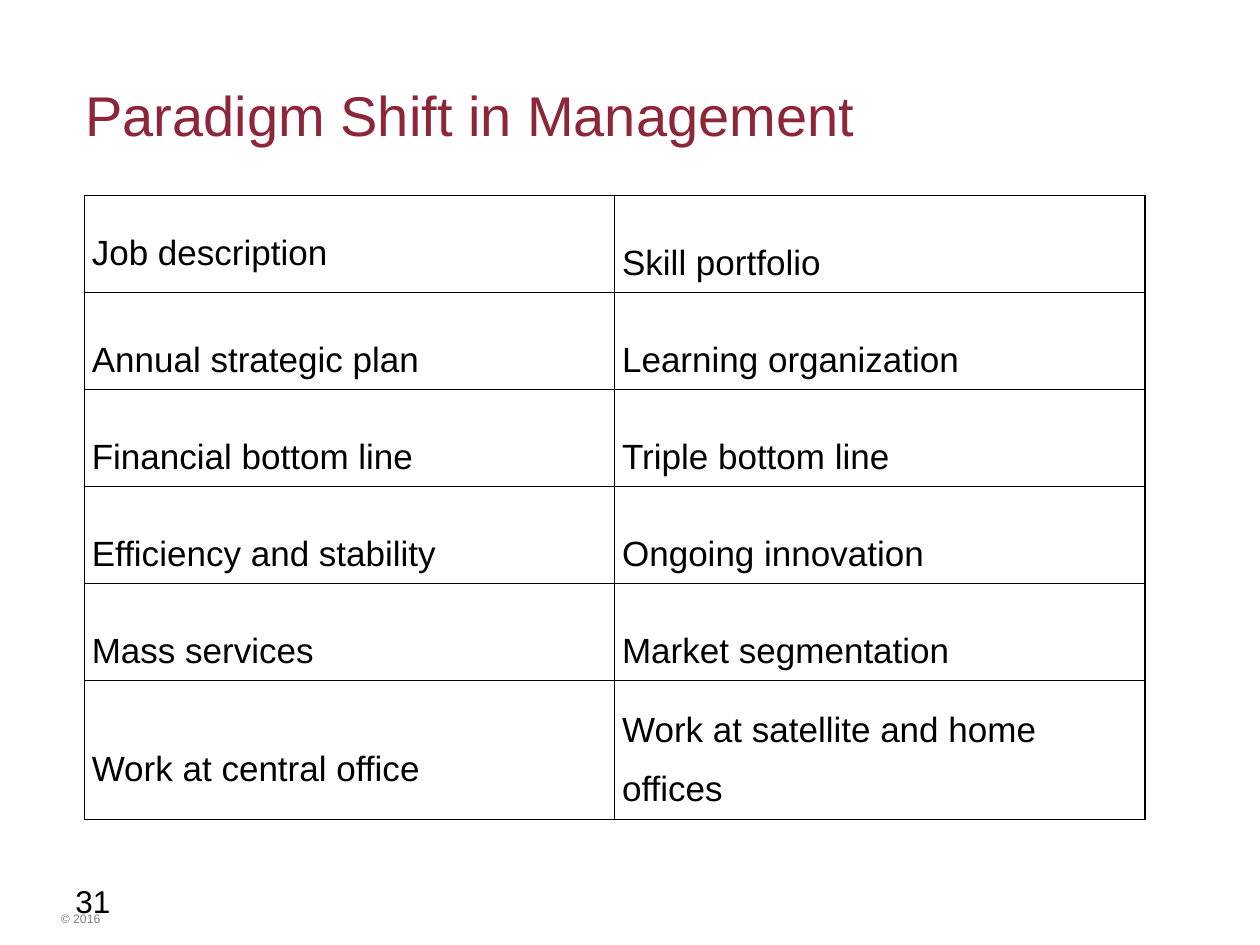
"""Build the slide on the paradigm shift in management."""
import pptx
import pptx.dml.color
import pptx.enum.text
import pptx.oxml
import pptx.oxml.ns
import pptx.util

Cm = pptx.util.Cm
Pt = pptx.util.Pt
RGBColor = pptx.dml.color.RGBColor
ALIGN = pptx.enum.text.PP_ALIGN
ANCHOR = pptx.enum.text.MSO_ANCHOR

TITLE = "Paradigm Shift in Management"
SHIFTS = [
    ("Job description", "Skill portfolio"),
    ("Annual strategic plan", "Learning organization"),
    ("Financial bottom line", "Triple bottom line"),
    ("Efficiency and stability", "Ongoing innovation"),
    ("Mass services", "Market segmentation"),
    ("Work at central office", "Work at satellite and home offices"),
]
TIGHT_TEXTS = {SHIFTS[0][0], SHIFTS[-1][1]}
PAGE_NUMBER = "31"
COPYRIGHT = "© 2016"

FONT = "Arial"
MAROON = RGBColor(0x8C, 0x26, 0x38)
BLACK = RGBColor(0, 0, 0)
GRAY = RGBColor(0x80, 0x80, 0x80)
WHITE = RGBColor(0xFF, 0xFF, 0xFF)

COLUMN_WIDTH = Cm(10.69)
ROW_HEIGHT = Cm(1.94)
LAST_ROW_HEIGHT = Cm(2.79)


def write(frame, text, size, color, align=ALIGN.LEFT):
    frame.text = text
    paragraph = frame.paragraphs[0]
    paragraph.alignment = align
    font = paragraph.runs[0].font
    font.name, font.size = FONT, Pt(size)
    font.color.rgb = color
    return paragraph


def place(box, left, top, width, height):
    box.left, box.top, box.width, box.height = map(Cm, (left, top, width, height))


def add_label(page, position, text, size, color, align=ALIGN.LEFT):
    box = page.shapes.add_textbox(*map(Cm, position))
    box.text_frame.word_wrap = True
    write(box.text_frame, text, size, color, align)


def add_borders(cell):
    properties = cell._tc.get_or_add_tcPr()
    for index, side in enumerate(("lnL", "lnR", "lnT", "lnB")):
        line = pptx.oxml.parse_xml(
            f'<a:{side} {pptx.oxml.ns.nsdecls("a")} w="{Pt(1)}">'
            f'<a:solidFill><a:srgbClr val="{BLACK}"/></a:solidFill></a:{side}>'
        )
        properties.insert(index, line)


def fill_cell(cell, text):
    cell.fill.solid()
    cell.fill.fore_color.rgb = WHITE
    cell.vertical_anchor = ANCHOR.MIDDLE
    cell.margin_left = cell.margin_right = Cm(0.15)
    cell.margin_top = cell.margin_bottom = Cm(0.13)
    paragraph = write(cell.text_frame, text, 20, BLACK)
    if text in TIGHT_TEXTS:
        paragraph.line_spacing = 1.5
    else:
        paragraph.line_spacing = 2.0
        paragraph.space_after = Pt(5)
    add_borders(cell)


def add_shift_table(page):
    height = ROW_HEIGHT * (len(SHIFTS) - 1) + LAST_ROW_HEIGHT
    frame = page.shapes.add_table(
        len(SHIFTS), 2, Cm(1.7), Cm(3.94), COLUMN_WIDTH * 2, height
    )
    table = frame.table
    table.first_row = table.horz_banding = False
    for column in table.columns:
        column.width = COLUMN_WIDTH
    for row, texts in zip(table.rows, SHIFTS):
        row.height = ROW_HEIGHT
        for cell, text in zip(row.cells, texts):
            fill_cell(cell, text)
    table.rows[len(SHIFTS) - 1].height = LAST_ROW_HEIGHT


def main():
    deck = pptx.Presentation()
    deck.slide_width, deck.slide_height = Cm(25.4), Cm(19.05)
    page = deck.slides.add_slide(deck.slide_layouts[5])

    title = page.shapes.title
    place(title, 1.47, 1.5, 17.98, 1.63)
    title.text_frame.auto_size = pptx.enum.text.MSO_AUTO_SIZE.NONE
    title.text_frame.vertical_anchor = ANCHOR.TOP
    write(title.text_frame, TITLE, 32, MAROON)

    add_label(page, (0.66, 18.24, 1.93, 0.56), COPYRIGHT, 7, GRAY, ALIGN.CENTER)
    add_label(page, (1.27, 17.65, 5.92, 1.02), PAGE_NUMBER, 18, BLACK)
    add_shift_table(page)
    deck.save("out.pptx")


if __name__ == "__main__":
    main()
